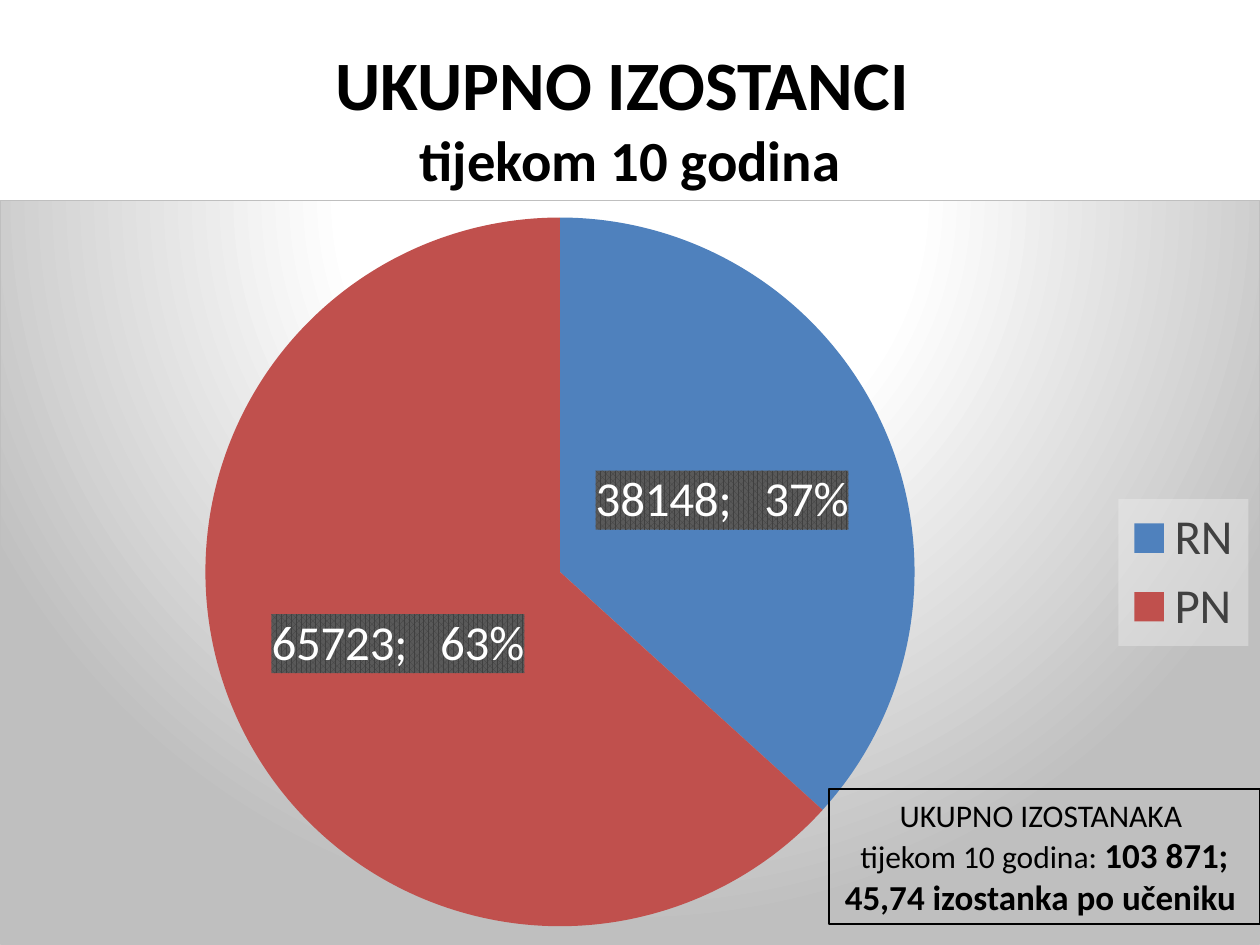
"""Builds a slide with a pie chart of total absences over ten years."""
from dataclasses import dataclass

import lxml.etree
import pptx
import pptx.chart.data
import pptx.dml.color
import pptx.enum.chart
import pptx.enum.shapes
import pptx.enum.text
import pptx.oxml
import pptx.oxml.ns
import pptx.util

EMU_PER_PX = 914400 / 126
FONT = "Calibri"
BLACK = pptx.dml.color.RGBColor(0x00, 0x00, 0x00)
WHITE = pptx.dml.color.RGBColor(0xFF, 0xFF, 0xFF)
DARK = pptx.dml.color.RGBColor(0x40, 0x40, 0x40)
BLUE = pptx.dml.color.RGBColor(0x4F, 0x81, 0xBD)
RED = pptx.dml.color.RGBColor(0xC0, 0x50, 0x4D)
NS = pptx.oxml.ns.nsdecls("a", "c")
CENTER = pptx.enum.text.PP_ALIGN.CENTER
MIDDLE = pptx.enum.text.MSO_ANCHOR.MIDDLE

BACKDROP = f"""<c:spPr {NS}><a:gradFill rotWithShape="1"><a:gsLst>
<a:gs pos="0"><a:srgbClr val="FFFFFF"/></a:gs>
<a:gs pos="39000"><a:srgbClr val="FFFFFF"/></a:gs>
<a:gs pos="100000"><a:srgbClr val="BFBFBF"/></a:gs></a:gsLst>
<a:path path="circle"><a:fillToRect l="50000" t="-80000" r="50000" b="180000"/></a:path>
</a:gradFill><a:ln w="9525"><a:solidFill><a:srgbClr val="BFBFBF"/></a:solidFill></a:ln></c:spPr>"""
LABEL_FILL = f"""<c:spPr {NS}><a:pattFill prst="pct75">
<a:fgClr><a:srgbClr val="404040"/></a:fgClr><a:bgClr><a:srgbClr val="595959"/></a:bgClr>
</a:pattFill><a:ln><a:noFill/></a:ln></c:spPr>"""
LEGEND_FILL = f"""<c:spPr {NS}><a:solidFill><a:srgbClr val="F2F2F2"><a:alpha val="39000"/>
</a:srgbClr></a:solidFill><a:ln><a:noFill/></a:ln></c:spPr>"""


@dataclass(frozen=True)
class Box:
    x: int
    y: int
    w: int
    h: int

    def emu(self) -> list[int]:
        return [px(v) for v in (self.x, self.y, self.w, self.h)]


@dataclass(frozen=True)
class Run:
    text: str
    size: float
    bold: bool = False


@dataclass(frozen=True)
class Slice:
    name: str
    value: int
    color: pptx.dml.color.RGBColor


TITLE_BOX = Box(63, 38, 1134, 158)
CHART_BOX = Box(0, 200, 1260, 745)
PIE_BOX = Box(205, 217, 710, 710)
LEGEND_BOX = Box(1119, 499, 130, 147)
TOTAL_BOX = Box(829, 789, 431, 135)
TITLE = [[Run("UKUPNO IZOSTANCI ", 39.6, True)], [Run("tijekom 10 godina", 32.4, True)]]
TOTAL = [
    [Run("UKUPNO IZOSTANAKA ", 18)],
    [Run("tijekom 10 godina: ", 18), Run("103 871;", 20, True)],
    [Run("45,74 izostanka po učeniku ", 20, True)],
]
SLICES = [Slice("RN", 38148, BLUE), Slice("PN", 65723, RED)]


def px(n: int) -> int:
    return round(n * EMU_PER_PX)


def set_font(font, size: float, color, bold: bool = False) -> None:
    for key, value in {"name": FONT, "size": pptx.util.Pt(size), "bold": bold}.items():
        setattr(font, key, value)
    font.color.rgb = color


def write(tf, lines: list[list[Run]]) -> None:
    for key, value in {"word_wrap": True, "vertical_anchor": MIDDLE}.items():
        setattr(tf, key, value)
    for i, line in enumerate(lines):
        p = tf.add_paragraph() if i else tf.paragraphs[0]
        p.alignment = CENTER
        for run in line:
            r = p.add_run()
            r.text = run.text
            set_font(r.font, run.size, BLACK, run.bold)


def layout(box: Box, inner: bool = False) -> lxml.etree._Element:
    ratios = {
        "x": (box.x - CHART_BOX.x) / CHART_BOX.w,
        "y": (box.y - CHART_BOX.y) / CHART_BOX.h,
        "w": box.w / CHART_BOX.w,
        "h": box.h / CHART_BOX.h,
    }
    target = '<c:layoutTarget val="inner"/>' if inner else ""
    modes = "".join(f'<c:{k}Mode val="edge"/>' for k in "xy")
    sizes = "".join(f'<c:{k} val="{v:.4f}"/>' for k, v in ratios.items())
    return pptx.oxml.parse_xml(
        f"<c:layout {NS}><c:manualLayout>{target}{modes}{sizes}</c:manualLayout></c:layout>"
    )


def drop_layout(parent) -> None:
    for old in parent.findall(pptx.oxml.ns.qn("c:layout")):
        parent.remove(old)


def add_pie(s) -> None:
    data = pptx.chart.data.CategoryChartData()
    data.categories = [sl.name for sl in SLICES]
    data.add_series("Series 1", [sl.value for sl in SLICES])
    kind = pptx.enum.chart.XL_CHART_TYPE.PIE
    chart = s.shapes.add_chart(kind, *CHART_BOX.emu(), data).chart
    chart.has_title = False
    set_font(chart.font, 10, BLACK)
    chart._chartSpace.chart.addnext(pptx.oxml.parse_xml(BACKDROP))
    plot = chart.plots[0]
    plot.vary_by_categories = True
    for i, sl in enumerate(SLICES):
        fill = plot.series[0].points[i].format.fill
        fill.solid()
        fill.fore_color.rgb = sl.color
    area = chart._chartSpace.chart.plotArea
    drop_layout(area)
    area.insert(0, layout(PIE_BOX, inner=True))
    style_labels(plot.series[0].data_labels)
    style_legend(chart)


def style_labels(labels) -> None:
    set_font(labels.font, 28, WHITE)
    formats = {
        "show_value": True,
        "show_percentage": True,
        "position": pptx.enum.chart.XL_LABEL_POSITION.CENTER,
    }
    for key, value in formats.items():
        setattr(labels, key, value)
    el = labels._element
    el.find(pptx.oxml.ns.qn("c:txPr")).addprevious(pptx.oxml.parse_xml(LABEL_FILL))
    separator = pptx.oxml.parse_xml(f"<c:separator {NS}>;   </c:separator>")
    el.find(pptx.oxml.ns.qn("c:showBubbleSize")).addnext(separator)


def style_legend(chart) -> None:
    chart.has_legend = True
    legend = chart.legend
    legend.position = pptx.enum.chart.XL_LEGEND_POSITION.RIGHT
    legend.include_in_layout = False
    set_font(legend.font, 28, DARK)
    el = legend._element
    drop_layout(el)
    el.find(pptx.oxml.ns.qn("c:legendPos")).addnext(layout(LEGEND_BOX))
    el.find(pptx.oxml.ns.qn("c:txPr")).addprevious(pptx.oxml.parse_xml(LEGEND_FILL))


def add_total(s) -> None:
    sp = s.shapes.add_shape(pptx.enum.shapes.MSO_SHAPE.RECTANGLE, *TOTAL_BOX.emu())
    sp.shadow.inherit = False
    sp.fill.background()
    sp.line.color.rgb = BLACK
    sp.line.width = pptx.util.Pt(0.75)
    write(sp.text_frame, TOTAL)


def main() -> None:
    prs = pptx.Presentation()
    prs.slide_width, prs.slide_height = px(1260), px(945)
    s = prs.slides.add_slide(prs.slide_layouts[6])
    write(s.shapes.add_textbox(*TITLE_BOX.emu()).text_frame, TITLE)
    add_pie(s)
    add_total(s)
    prs.save("out.pptx")


if __name__ == "__main__":
    main()
